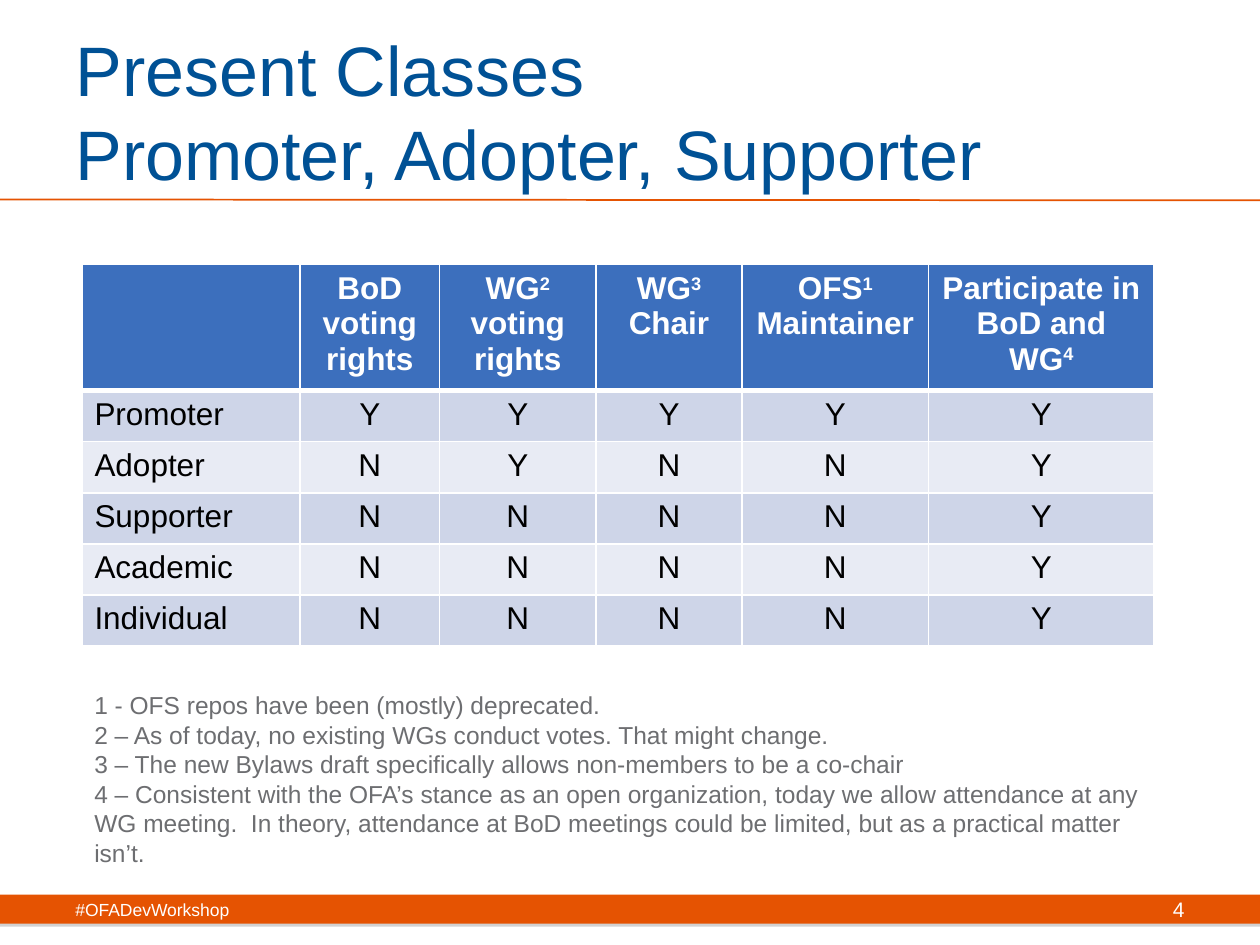
from dataclasses import dataclass

from lxml import etree
from pptx import Presentation
from pptx.dml.color import RGBColor
from pptx.enum.shapes import MSO_CONNECTOR, MSO_SHAPE
from pptx.enum.text import MSO_ANCHOR, MSO_AUTO_SIZE, PP_ALIGN
from pptx.oxml import parse_xml
from pptx.oxml.ns import nsdecls, qn
from pptx.util import Pt

LEFT, CENTER, RIGHT = PP_ALIGN.LEFT, PP_ALIGN.CENTER, PP_ALIGN.RIGHT
MIDDLE, TOP = MSO_ANCHOR.MIDDLE, MSO_ANCHOR.TOP
NO_FIT = MSO_AUTO_SIZE.NONE
RECT, STRAIGHT = MSO_SHAPE.RECTANGLE, MSO_CONNECTOR.STRAIGHT


@dataclass(frozen=True)
class Theme:
    """Hold the colours and type sizes of the slide."""
    font: str = "Arial"
    blue: str = "005195"
    orange: str = "E55302"
    head: str = "3C6FBD"
    bands: tuple = ("CED5E8", "E8EBF4")
    white: str = "FFFFFF"
    black: str = "000000"
    grey: str = "6D6E71"
    shade: str = "808080"
    title: int = 40
    cell: int = 18
    note: int = 14
    page: int = 12
    tag: int = 10


THEME = Theme()
TITLE = ("Present Classes", "Promoter, Adopter, Supporter")
WIDTHS = (124.6, 79.9, 89.3, 83.5, 106.6, 128.9)
HEADS = (
    (),
    ("BoD voting rights",),
    ("WG", "2", " voting rights"),
    ("WG", "3", " Chair"),
    ("OFS", "1", " Maintainer"),
    ("Participate in BoD and WG", "4"),
)
VOTES = (
    ("Promoter", "YYYYY"),
    ("Adopter", "NYNNY"),
    ("Supporter", "NNNNY"),
    ("Academic", "NNNNY"),
    ("Individual", "NNNNY"),
)
NOTES = (
    "1 - OFS repos have been (mostly) deprecated.",
    "2 – As of today, no existing WGs conduct votes. That might change.",
    "3 – The new Bylaws draft specifically allows non-members to be a co-chair",
    "4 – Consistent with the OFA’s stance as an open organization, today we "
    "allow attendance at any WG meeting.  In theory, attendance at BoD meetings "
    "could be limited, but as a practical matter isn’t.",
)


def color(code):
    """Turn a hex code into a colour."""
    return RGBColor.from_string(code)


def place(shape, box):
    """Move a shape to a box given in points."""
    shape.left, shape.top, shape.width, shape.height = map(Pt, box)


def add_run(para, text, size, tint, bold=False):
    """Add one formatted run to a paragraph."""
    run = para.add_run()
    run.text = text
    font = run.font
    font.name, font.size, font.bold = THEME.font, Pt(size), bold
    font.color.rgb = color(tint)
    return run


def add_text(slide, box, lines, size, tint, align=LEFT, anchor=TOP, lead=None):
    """Add a text box with one paragraph per line."""
    shape = slide.shapes.add_textbox(*map(Pt, box))
    frame = shape.text_frame
    frame.word_wrap, frame.vertical_anchor = True, anchor
    for num, line in enumerate(lines):
        para = frame.add_paragraph() if num else frame.paragraphs[0]
        para.alignment = align
        if lead:
            para.line_spacing = Pt(lead)
        add_run(para, line, size, tint)


def add_title(slide, box):
    """Fill the title placeholder and draw the rule below it."""
    left, top, width, height = box
    title = slide.shapes.title
    place(title, (left + 36, top + 18, 588, height - 24))
    frame = title.text_frame
    frame.auto_size, frame.vertical_anchor = NO_FIT, MIDDLE
    para = frame.paragraphs[0]
    para.alignment, para.line_spacing = LEFT, Pt(THEME.title * 1.2)
    for num, line in enumerate(TITLE):
        if num:
            para.add_line_break()
        add_run(para, line, THEME.title, THEME.blue)
    base = top + height
    rule = slide.shapes.add_connector(
        STRAIGHT, Pt(left), Pt(base), Pt(left + width), Pt(base + 0.5))
    rule.line.color.rgb, rule.line.width = color(THEME.orange), Pt(1)
    etree.SubElement(rule._element.spPr, qn("a:effectLst"))


def style_cell(cell, fill, low):
    """Fill a cell and give it white borders."""
    cell.fill.solid()
    cell.fill.fore_color.rgb = color(fill)
    sides = {"lnL": 1, "lnR": 1, "lnT": 1, "lnB": low}
    for num, (side, width) in enumerate(sides.items()):
        line = parse_xml(
            f'<a:{side} {nsdecls("a")} w="{Pt(width)}"><a:solidFill>'
            f'<a:srgbClr val="{THEME.white}"/></a:solidFill></a:{side}>')
        cell._tc.get_or_add_tcPr().insert(num, line)


def add_grid(slide, box):
    """Add the table of rights for each class of member."""
    left, top, width, height = box
    frame = slide.shapes.add_table(
        len(VOTES) + 1, len(WIDTHS), *map(Pt, box))
    grid = frame.table
    step = 29.2
    for col, size in zip(grid.columns, WIDTHS):
        col.width = Pt(size)
    for row in grid.rows:
        row.height = Pt(step)
    grid.rows[0].height = Pt(height - step * len(VOTES))
    for col, parts in enumerate(HEADS):
        cell = grid.cell(0, col)
        style_cell(cell, THEME.head, 3)
        para = cell.text_frame.paragraphs[0]
        para.alignment = CENTER
        for part in parts:
            run = add_run(para, part, THEME.cell, THEME.white, True)
            if part.isdigit():
                run.font._element.set("baseline", "30000")
    for num, (name, votes) in enumerate(VOTES):
        for col, text in enumerate((name, *votes)):
            cell = grid.cell(num + 1, col)
            style_cell(cell, THEME.bands[num % 2], 1)
            para = cell.text_frame.paragraphs[0]
            para.alignment = CENTER if col else LEFT
            add_run(para, text, THEME.cell, THEME.black)


def add_notes(slide, box):
    """Add the numbered notes below the table."""
    add_text(slide, box, NOTES, THEME.note, THEME.grey, lead=THEME.note * 1.2)


def add_foot(slide, box):
    """Add the footer bar with its tag and page number."""
    left, top, width, height = box
    bar = slide.shapes.add_shape(RECT, *map(Pt, box))
    bar.fill.solid()
    bar.fill.fore_color.rgb = color(THEME.orange)
    bar.line.fill.background()
    bar._element.spPr.append(parse_xml(
        f'<a:effectLst {nsdecls("a")}><a:outerShdw dist="{Pt(1.8)}" '
        f'dir="5400000" rotWithShape="0"><a:srgbClr val="{THEME.shade}">'
        '<a:alpha val="35000"/></a:srgbClr></a:outerShdw></a:effectLst>'))
    high = 28.8
    mid = top + (height - high) / 2
    add_text(slide, (left + 36, mid, 228, high), ("#OFADevWorkshop",),
             THEME.tag, THEME.white, anchor=MIDDLE)
    add_text(slide, (left + width - 204, mid, 168, high), ("4",),
             THEME.page, THEME.white, RIGHT, MIDDLE)


def main():
    """Build the slide and save it."""
    deck = Presentation()
    deck.slide_width, deck.slide_height = Pt(720), Pt(540)
    slide = deck.slides.add_slide(deck.slide_layouts[5])
    add_foot(slide, (0, 511.2, 720, 16.6))
    add_title(slide, (0, 0, 720, 114))
    add_grid(slide, (46.8, 151.2, sum(WIDTHS), 213.5))
    add_notes(slide, (46.8, 391, 631.4, 92.2))
    deck.save("out.pptx")


if __name__ == "__main__":
    main()
